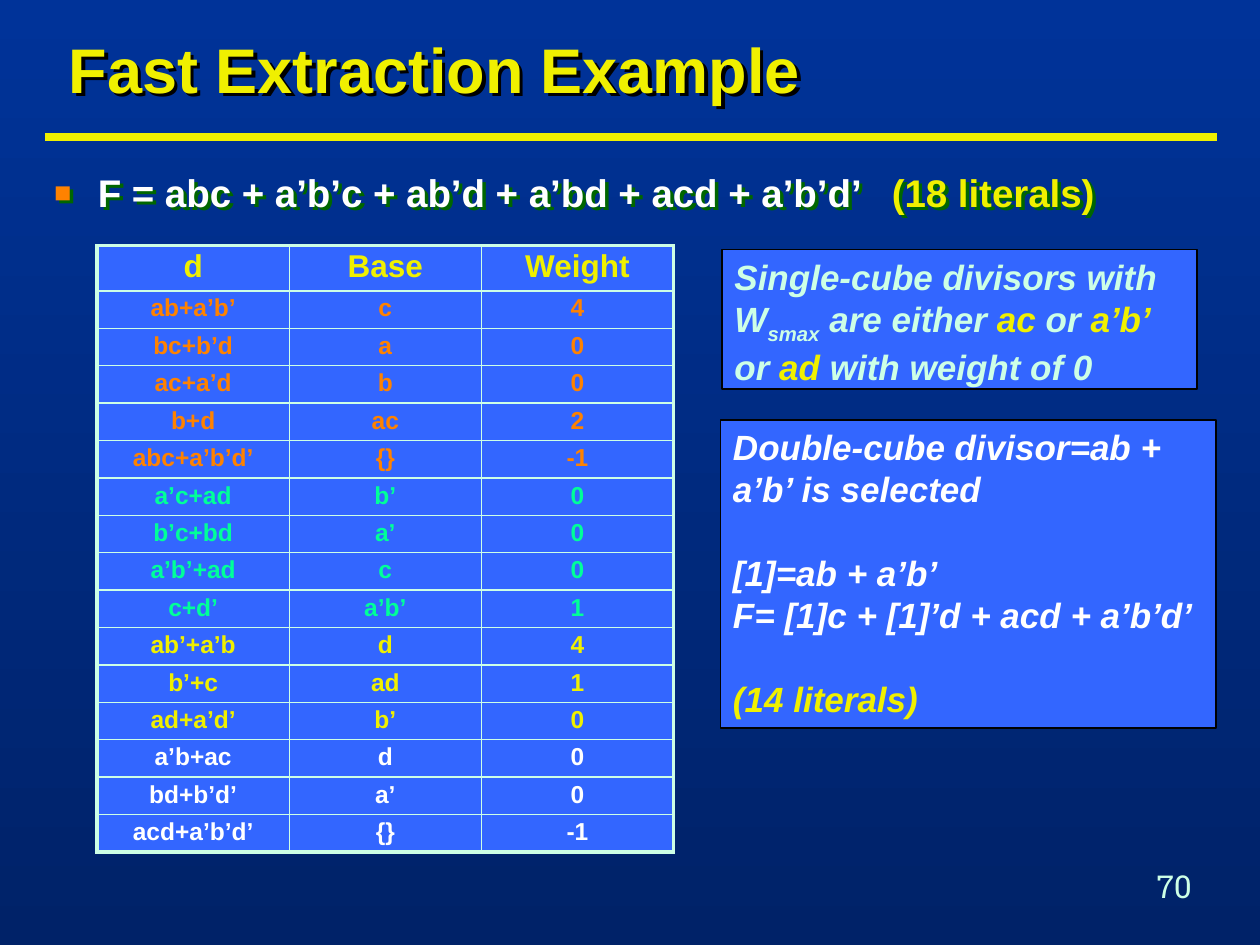
from lxml.etree import SubElement
from pptx import Presentation
from pptx.dml.color import RGBColor
from pptx.enum.shapes import MSO_CONNECTOR as CONN, MSO_SHAPE as SHAPE
from pptx.enum.text import MSO_ANCHOR as ANCHOR, PP_ALIGN as ALIGN
from pptx.oxml.ns import qn
from pptx.util import Pt

COLORS = {
    "top": "003399", "bottom": "002268", "yellow": "F0F000", "mint": "CDFFE6",
    "white": "FFFFFF", "orange": "FF8200", "green": "00FF99", "panel": "3366FF",
    "black": "000000", "shade": "006600",
}
HEADER = ("d", "Base", "Weight")
DIVISORS = {
    "orange": [("ab+a’b’", "c", "4"), ("bc+b’d", "a", "0"), ("ac+a’d", "b", "0"),
               ("b+d", "ac", "2"), ("abc+a’b’d’", "{}", "-1")],
    "green": [("a’c+ad", "b’", "0"), ("b’c+bd", "a’", "0"), ("a’b’+ad", "c", "0"),
              ("c+d’", "a’b’", "1")],
    "yellow": [("ab’+a’b", "d", "4"), ("b’+c", "ad", "1"), ("ad+a’d’", "b’", "0")],
    "white": [("a’b+ac", "d", "0"), ("bd+b’d’", "a’", "0"), ("acd+a’b’d’", "{}", "-1")],
}
SINGLE_CUBE = [[
    ("Single-cube divisors with W", "mint"), ("smax", "mint", -25000),
    (" are either ", "mint"), ("ac", "yellow"), (" or ", "mint"), ("a’b’", "yellow"),
    (" or ", "mint"), ("ad ", "yellow"), ("with weight of 0", "mint"),
]]
DOUBLE_CUBE = [
    [("Double-cube divisor=ab + a’b’ is selected", "white")],
    [("[1]=ab + a’b’", "white")],
    [("F= [1]c + [1]’d + acd + a’b’d’", "white")],
    [("(14 literals)", "yellow")],
]


def rgb(name):
    """Return the named colour."""
    return RGBColor.from_string(COLORS[name])


def add_run(p, text, size, color, bold=True, italic=False, font="Arial"):
    """Add one formatted run to a paragraph."""
    r = p.add_run()
    r.text = text
    r.font.name, r.font.size = font, Pt(size)
    r.font.bold, r.font.italic = bold, italic
    r.font.color.rgb = rgb(color)
    return r


def add_text_box(s, box):
    """Add a wrapping text box and return it with its first paragraph."""
    sp = s.shapes.add_textbox(*map(Pt, box))
    sp.text_frame.word_wrap = True
    return sp, sp.text_frame.paragraphs[0]


def add_text_shadow(sp, color, distance):
    """Cast a diagonal shadow from the text of an unfilled box."""
    effects = SubElement(sp.element.spPr, qn("a:effectLst"))
    shadow = SubElement(effects, qn("a:outerShdw"), dist=str(Pt(distance)), dir="2700000")
    SubElement(shadow, qn("a:srgbClr"), val=COLORS[color])


def set_background(s):
    """Fill the slide with a vertical blue gradient."""
    fill = s.background.fill
    fill.gradient()
    fill.gradient_angle = 270
    for stop, name, position in zip(fill.gradient_stops, ("top", "bottom"), (0, 1)):
        stop.color.rgb, stop.position = rgb(name), position


def add_title(s, box):
    """Add the title and the yellow rule below it."""
    left, top, width, height = box
    sp, p = add_text_box(s, box)
    sp.text_frame.vertical_anchor = ANCHOR.MIDDLE
    sp.text_frame.margin_left = Pt(17)
    p.line_spacing = 0.9
    add_run(p, "Fast Extraction Example", 36, "yellow")
    add_text_shadow(sp, "black", 2.8)
    y = top + height + 11.5
    rule = s.shapes.add_connector(
        CONN.STRAIGHT, Pt(left + 3.7), Pt(y), Pt(left + width - 2.8), Pt(y))
    rule.line.color.rgb, rule.line.width = rgb("yellow"), Pt(4.5)
    SubElement(rule.element.spPr, qn("a:effectLst"))


def add_function(s, box):
    """Add the bulleted function with its literal count at a tab stop."""
    sp, p = add_text_box(s, box)
    p.line_spacing, p.space_before = 0.9, Pt(8.8)
    pPr = p._p.get_or_add_pPr()
    pPr.set("marL", str(Pt(25)))
    pPr.set("indent", str(Pt(-25)))
    SubElement(SubElement(pPr, qn("a:buClr")), qn("a:srgbClr"), val=COLORS["orange"])
    SubElement(pPr, qn("a:buSzPct"), val="75000")
    SubElement(pPr, qn("a:buFont"), typeface="Arial")
    SubElement(pPr, qn("a:buChar"), char="■")
    SubElement(SubElement(pPr, qn("a:tabLst")), qn("a:tab"), pos=str(Pt(478.7)), algn="l")
    add_run(p, "F = abc + a’b’c + ab’d + a’bd + acd + a’b’d’\t", 22, "white")
    add_run(p, "(18 literals)", 22, "yellow")
    add_text_shadow(sp, "shade", 2.8)


def fill_cell(cell, text, size, color, edges):
    """Write one cell and draw its borders, thick on the table's edges."""
    cell.margin_top, cell.margin_bottom = Pt(3.6), Pt(2.4)
    p = cell.text_frame.paragraphs[0]
    p.alignment, p.line_spacing = ALIGN.CENTER, 0.9
    add_run(p, text, size, color)
    tcPr = cell._tc.get_or_add_tcPr()
    for side in "LRTB":
        width = Pt(2.25 if side in edges else 1)
        ln = SubElement(tcPr, qn(f"a:ln{side}"), w=str(width))
        SubElement(SubElement(ln, qn("a:solidFill")), qn("a:srgbClr"), val=COLORS["mint"])
    cell.fill.solid()
    cell.fill.fore_color.rgb = rgb("panel")


def add_divisor_table(s, box):
    """Add the table of double-cube divisors, coloured by group."""
    rows = [(HEADER, 18, "yellow")]
    rows += [(row, 14, color) for color, group in DIVISORS.items() for row in group]
    table = s.shapes.add_table(len(rows), len(HEADER), *map(Pt, box)).table
    table.first_row = table.horz_banding = False
    last_row, last_col = len(rows) - 1, len(HEADER) - 1
    for i, (texts, size, color) in enumerate(rows):
        table.rows[i].height = Pt(21.4 if i else 25.8)
        for j, text in enumerate(texts):
            on_edge = {"L": j == 0, "R": j == last_col, "T": i == 0, "B": i == last_row}
            edges = [side for side, outer in on_edge.items() if outer]
            fill_cell(table.cell(i, j), text, size, color, edges)


def add_note(s, box, paragraphs, gaps=()):
    """Add a blue note, with a line of space before the paragraphs in gaps."""
    sp = s.shapes.add_shape(SHAPE.RECTANGLE, *map(Pt, box))
    sp.shadow.inherit = False
    sp.fill.solid()
    sp.fill.fore_color.rgb = rgb("panel")
    sp.line.color.rgb, sp.line.width = rgb("black"), Pt(1)
    tf = sp.text_frame
    tf.word_wrap, tf.vertical_anchor = True, ANCHOR.TOP
    for i, runs in enumerate(paragraphs):
        p = tf.add_paragraph() if i else tf.paragraphs[0]
        p.alignment, p.line_spacing = ALIGN.LEFT, 1.0
        if i in gaps:
            p.space_before = Pt(24)
        for text, color, *baseline in runs:
            r = add_run(p, text, 20, color, italic=True)
            if baseline:
                r.font._element.set("baseline", str(baseline[0]))


def add_slide_number(s, box):
    """Add the slide number."""
    _, p = add_text_box(s, box)
    add_run(p, "70", 18, "mint", bold=False, font="Roboto Slab")


def main():
    """Build the slide and save it."""
    prs = Presentation()
    prs.slide_width, prs.slide_height = Pt(720), Pt(540)
    s = prs.slides.add_slide(prs.slide_layouts[6])
    set_background(s)
    add_title(s, (22.3, 16.6, 676, 50.4))
    add_slide_number(s, (653.8, 491.8, 66.2, 28.8))
    add_function(s, (23.8, 95.8, 653.8, 36))
    add_divisor_table(s, (55.5, 140.4, 329.4, 346.8))
    add_note(s, (412.6, 142.6, 271.4, 79.9), SINGLE_CUBE)
    add_note(s, (411.8, 239.8, 283, 176.4), DOUBLE_CUBE, gaps=(1, 3))
    prs.save("out.pptx")


if __name__ == "__main__":
    main()
